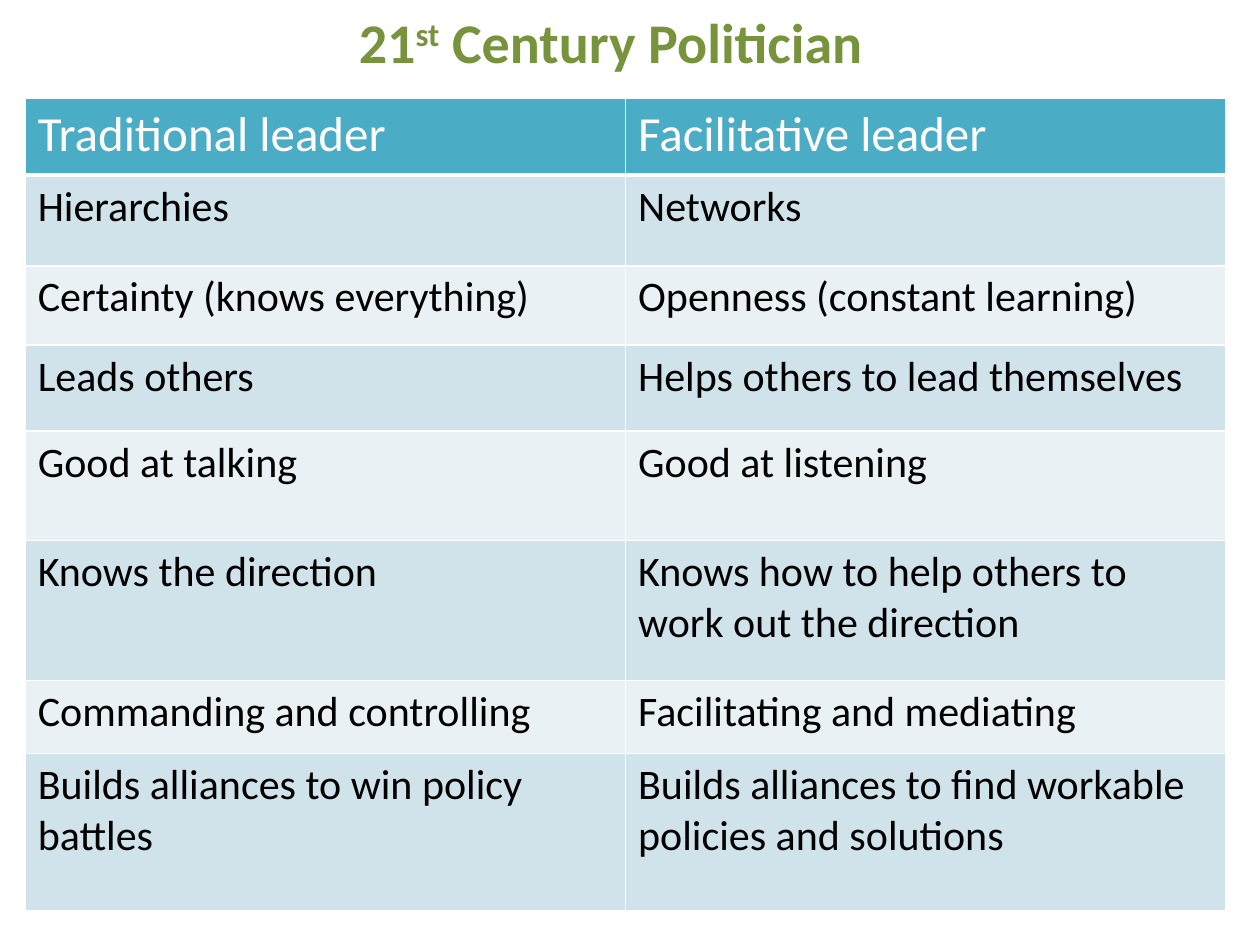
from dataclasses import dataclass

from lxml.etree import SubElement
from pptx import Presentation
from pptx.dml.color import RGBColor
from pptx.enum.text import MSO_AUTO_SIZE
from pptx.oxml.ns import qn
from pptx.util import Inches, Pt


@dataclass(frozen=True)
class Theme:
    font: str = "Calibri"
    title_color: str = "77933C"
    header_fill: str = "4BACC6"
    band_fills: tuple = ("D0E3EA", "E9F1F5")
    white: str = "FFFFFF"
    black: str = "000000"
    title_size: int = 32
    header_size: int = 28
    body_size: int = 24


@dataclass(frozen=True)
class Comparison:
    traditional: str
    facilitative: str
    height: float


THEME = Theme()
COMPARISONS = [
    Comparison("Traditional leader", "Facilitative leader", 0.61),
    Comparison("Hierarchies", "Networks", 0.72),
    Comparison("Certainty (knows everything)", "Openness (constant learning)", 0.63),
    Comparison("Leads others", "Helps others to lead themselves", 0.68),
    Comparison("Good at talking", "Good at listening", 0.87),
    Comparison("Knows the direction", "Knows how to help others to work out the direction", 1.11),
    Comparison("Commanding and controlling", "Facilitating and mediating", 0.58),
    Comparison("Builds alliances to win policy battles",
               "Builds alliances to find workable policies and solutions", 1.25),
]


def add_text(paragraph, text: str, *, size: int, color: str,
             bold: bool = False, raised: int = 0) -> None:
    """Append a formatted run; raised is the superscript offset in percent."""
    run = paragraph.add_run()
    run.text = text
    run.font.name = THEME.font
    run.font.size = Pt(size)
    run.font.bold = bold
    run.font.color.rgb = RGBColor.from_string(color)
    if raised:
        run._r.get_or_add_rPr().set("baseline", str(raised * 1000))


def set_borders(cell, bottom_width: int) -> None:
    properties = cell._tc.get_or_add_tcPr()
    for side, width in (("L", 1), ("R", 1), ("T", 1), ("B", bottom_width)):
        line = SubElement(properties, qn(f"a:ln{side}"), w=str(Pt(width)))
        fill = SubElement(line, qn("a:solidFill"))
        SubElement(fill, qn("a:srgbClr"), val=THEME.white)


def draw_title(slide) -> None:
    shape = slide.shapes.add_textbox(Inches(2.75), Inches(0.01), Inches(5.64), Inches(0.64))
    frame = shape.text_frame
    frame.word_wrap = True
    frame.auto_size = MSO_AUTO_SIZE.SHAPE_TO_FIT_TEXT
    for text, raised in (("21", 0), ("st", 30), (" Century Politician", 0)):
        add_text(frame.paragraphs[0], text, size=THEME.title_size,
                 color=THEME.title_color, bold=True, raised=raised)


def draw_table(slide, comparisons: list[Comparison]) -> None:
    height = sum(comparison.height for comparison in comparisons)
    table = slide.shapes.add_table(len(comparisons), 2, Inches(0.2), Inches(0.78),
                                   Inches(9.53), Inches(height)).table
    for row_index, comparison in enumerate(comparisons):
        is_header = row_index == 0
        table.rows[row_index].height = Inches(comparison.height)
        fill = THEME.header_fill if is_header else THEME.band_fills[(row_index - 1) % 2]
        for column_index, text in enumerate((comparison.traditional, comparison.facilitative)):
            cell = table.cell(row_index, column_index)
            set_borders(cell, bottom_width=3 if is_header else 1)
            cell.fill.solid()
            cell.fill.fore_color.rgb = RGBColor.from_string(fill)
            add_text(cell.text_frame.paragraphs[0], text,
                     size=THEME.header_size if is_header else THEME.body_size,
                     color=THEME.white if is_header else THEME.black)


def main() -> None:
    presentation = Presentation()
    presentation.slide_width = Inches(10)
    presentation.slide_height = Inches(7.5)
    slide = presentation.slides.add_slide(presentation.slide_layouts[6])

    # Leadership comparison, then the heading above it
    draw_table(slide, COMPARISONS)
    draw_title(slide)

    presentation.save("out.pptx")


if __name__ == "__main__":
    main()
